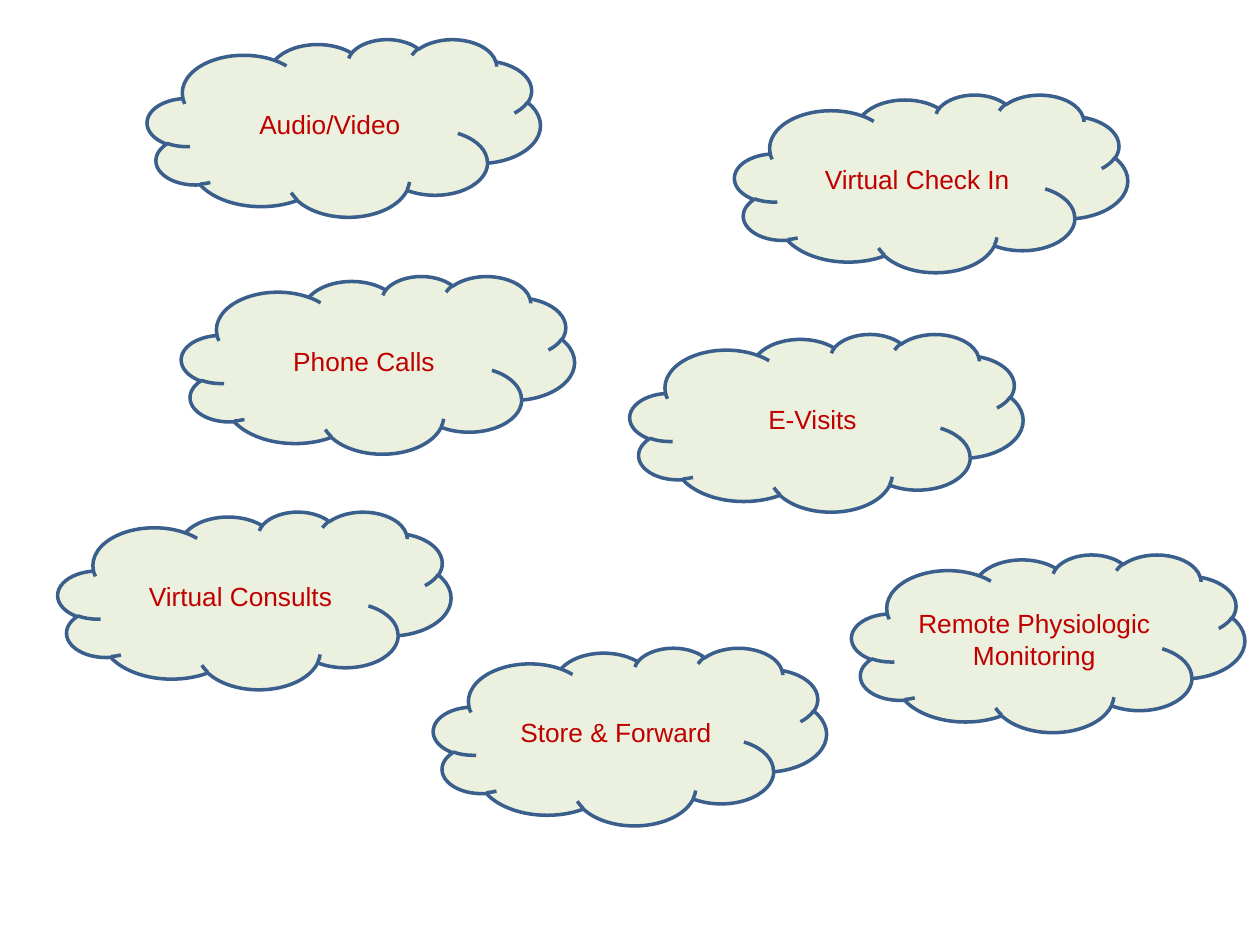
from pptx import Presentation
from pptx.dml.color import RGBColor
from pptx.enum.shapes import MSO_SHAPE
from pptx.enum.text import MSO_ANCHOR, PP_ALIGN
from pptx.util import Pt

CLOUD_W, CLOUD_H = 224.6, 101.5

# Label, left, top
CLOUDS = [
    ("Audio/Video", 84.2, 22.3),
    ("Phone Calls", 103.7, 157.7),
    ("Virtual Check In", 419.8, 54),
    ("E-Visits", 360, 190.8),
    ("Virtual Consults", 33.1, 292.3),
    ("Store & Forward", 247.7, 370.1),
    ("Remote Physiologic Monitoring", 486.7, 316.8),
]


def color(hex_string):
    return RGBColor.from_string(hex_string)


def add_cloud(slide, label, left, top, width, height):
    sp = slide.shapes.add_shape(
        MSO_SHAPE.CLOUD, Pt(left), Pt(top), Pt(width), Pt(height))
    sp.shadow.inherit = False
    sp.fill.solid()
    sp.fill.fore_color.rgb = color("EBF1DE")
    sp.line.color.rgb = color("3A5F8C")
    sp.line.width = Pt(2)

    # Centred label
    tf = sp.text_frame
    tf.word_wrap = True
    tf.vertical_anchor = MSO_ANCHOR.MIDDLE
    p = tf.paragraphs[0]
    p.text = label
    p.alignment = PP_ALIGN.CENTER
    p.font.name = "Arial"
    p.font.size = Pt(15)
    p.font.color.rgb = color("C00000")


def main():
    prs = Presentation()
    prs.slide_width, prs.slide_height = Pt(720), Pt(540)
    s = prs.slides.add_slide(prs.slide_layouts[6])

    # Telehealth service clouds
    for label, left, top in CLOUDS:
        add_cloud(s, label, left, top, CLOUD_W, CLOUD_H)

    prs.save("out.pptx")


if __name__ == "__main__":
    main()
